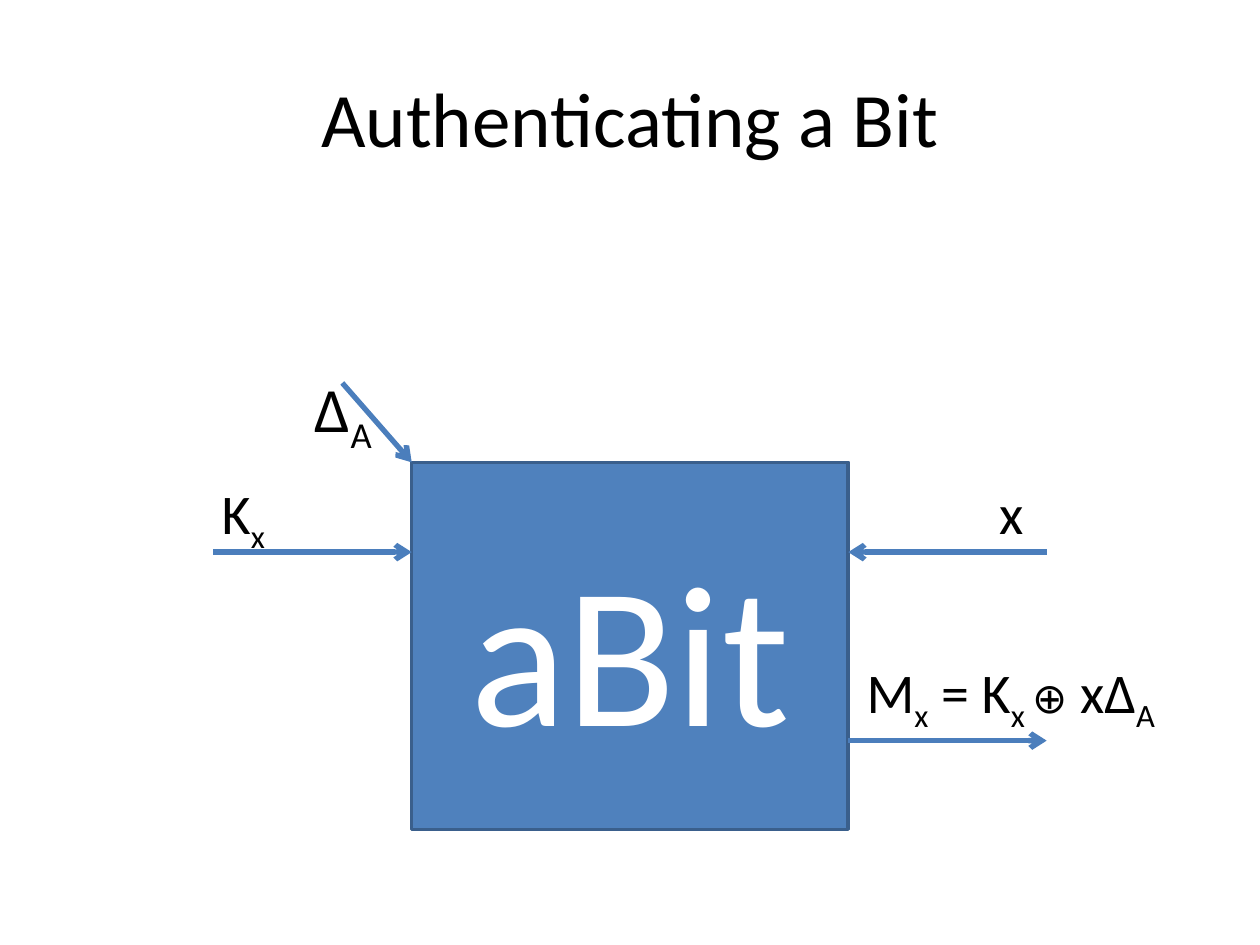
"""Build the slide that shows the aBit box with its inputs and outputs."""
from lxml import etree
from pptx import Presentation
from pptx.dml.color import RGBColor
from pptx.enum import shapes, text
from pptx.oxml.ns import qn
from pptx.util import Cm, Pt

THEME = {
    "font": "Calibri", "ink": "000000", "paper": "FFFFFF",
    "fill": "4F81BD", "edge": "3A5F8C", "arrow": "4B7EBC",
    "title": 44, "box": 115, "delta": 36, "label": 32, "sign": 24,
}

TITLE = ("Authenticating a Bit", (1.27, 0.76, 22.86, 3.18))
BOX = ("aBit", (8.3, 9.32, 8.8, 7.4))
LEFT, TOP = BOX[1][:2]
RIGHT = LEFT + BOX[1][2]
REACH, HIGH, LOW = 4, 11.13, 14.93

ARROWS = [
    ((LEFT - REACH, HIGH), (LEFT, HIGH)),
    ((RIGHT, LOW), (RIGHT + REACH, LOW)),
    ((RIGHT + REACH, HIGH), (RIGHT, HIGH)),
    ((6.9, 7.72), (LEFT, TOP)),
]

LABELS = [
    ((4.22, 9.52, 1.42, 1.62), [("K", "label", 0), ("x", "label", -25)]),
    ((19.89, 9.52, 1.04, 1.62), [("x", "label", 0)]),
    ((17.22, 13.13, 6.88, 2.13), [
        ("M", "label", 0), ("x", "label", -25), (" = K", "label", 0),
        ("x ", "label", -25), ("⊕", "sign", 0), (" xΔ", "label", 0),
        ("A", "label", -25)]),
    ((6.1, 7.32, 1.8, 1.8), [("Δ", "delta", 0), ("A", "delta", -25)]),
]


def tint(name):
    return RGBColor.from_string(THEME[name])


def style(run, size, ink="ink", base=0):
    font = run.font
    font.name, font.size = THEME["font"], Pt(THEME[size])
    font.color.rgb = tint(ink)
    if base:
        font._element.set("baseline", str(base * 1000))


def center(shape, words, size, ink):
    frame = shape.text_frame
    frame.text = words
    frame.vertical_anchor = text.MSO_ANCHOR.MIDDLE
    para = frame.paragraphs[0]
    para.alignment = text.PP_ALIGN.CENTER
    style(para.runs[0], size, ink)


def add_title(slide):
    words, place = TITLE
    head = slide.shapes.title
    head.left, head.top, head.width, head.height = map(Cm, place)
    center(head, words, "title", "ink")


def add_box(slide):
    words, place = BOX
    box = slide.shapes.add_shape(shapes.MSO_SHAPE.RECTANGLE, *map(Cm, place))
    box.shadow.inherit = False
    box.fill.solid()
    box.fill.fore_color.rgb = tint("fill")
    box.line.color.rgb = tint("edge")
    box.line.width = Pt(2)
    center(box, words, "box", "paper")


def add_arrow(slide, start, end):
    link = slide.shapes.add_connector(
        shapes.MSO_CONNECTOR.STRAIGHT, *map(Cm, start + end))
    link.line.color.rgb = tint("arrow")
    link.line.width = Pt(3)
    etree.SubElement(link.line._get_or_add_ln(), qn("a:tailEnd"), type="arrow")
    etree.SubElement(link._element.spPr, qn("a:effectLst"))


def add_label(slide, place, parts):
    frame = slide.shapes.add_textbox(*map(Cm, place)).text_frame
    frame.word_wrap = False
    frame.auto_size = text.MSO_AUTO_SIZE.SHAPE_TO_FIT_TEXT
    for words, size, base in parts:
        run = frame.paragraphs[0].add_run()
        run.text = words
        style(run, size, base=base)


def main():
    deck = Presentation()
    deck.slide_width, deck.slide_height = Cm(25.4), Cm(19.05)
    slide = deck.slides.add_slide(deck.slide_layouts[5])
    add_title(slide)
    add_box(slide)
    for place, parts in LABELS:
        add_label(slide, place, parts)
    for start, end in ARROWS:
        add_arrow(slide, start, end)
    deck.save("out.pptx")


if __name__ == "__main__":
    main()
